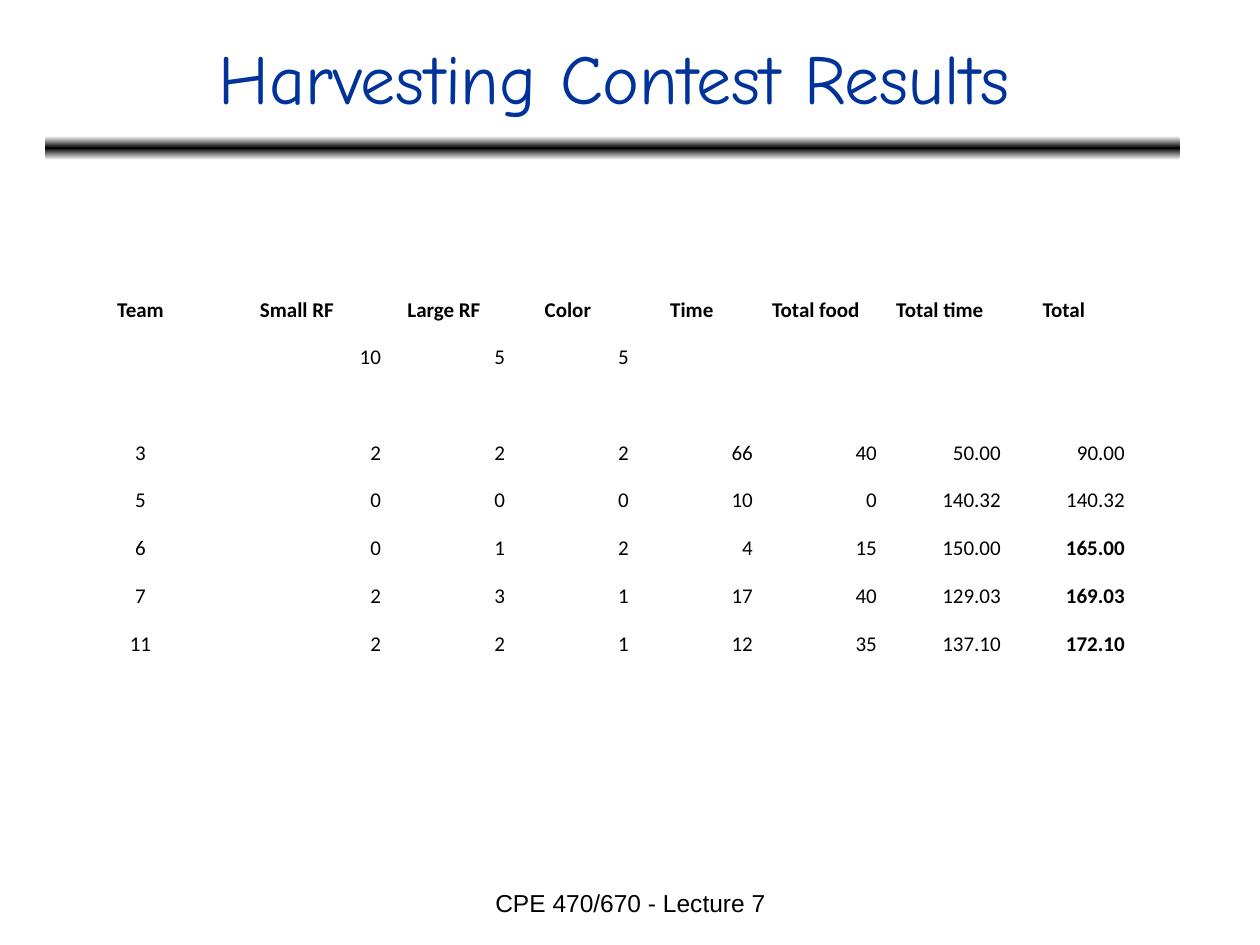
import copy

import pptx
import pptx.dml.color
import pptx.enum.shapes
import pptx.enum.text
import pptx.util

PX = 914400 / 126
COLORS = {"title": "003399", "text": "000000", "rule edge": "FFFFFF", "rule core": "000000"}
ALIGN = pptx.enum.text.PP_ALIGN
ANCHOR = pptx.enum.text.MSO_ANCHOR


def px(length):
    return pptx.util.Emu(round(length * PX))


def write(paragraph, text, color, align, **font_format):
    paragraph.alignment = align
    run = paragraph.add_run()
    run.text = text
    run.font.color.rgb = pptx.dml.color.RGBColor.from_string(COLORS[color])
    for attribute, value in font_format.items():
        setattr(run.font, attribute, value)


deck = pptx.Presentation()
deck.slide_width, deck.slide_height = px(1260), px(945)
slide = deck.slides.add_slide(deck.slide_layouts[5])

# Gradient rule under the title
rule = slide.shapes.add_shape(
    pptx.enum.shapes.MSO_SHAPE.ROUNDED_RECTANGLE, px(45), px(136), px(1135), px(24))
rule.shadow.inherit = False
rule.line.fill.background()
rule.fill.gradient()
rule.fill.gradient_angle = 90
stop_list = rule.fill._fill._gradFill.gsLst
stop_list.append(copy.deepcopy(stop_list[-1]))
for stop, position, color in zip(rule.fill.gradient_stops, (0, 0.5, 1),
                                 ("rule edge", "rule core", "rule edge")):
    stop.position = position
    stop.color.rgb = pptx.dml.color.RGBColor.from_string(COLORS[color])

# Title
title = slide.shapes.title
title.left, title.top, title.width, title.height = px(47), px(14), px(1134), px(125)
title.text_frame.vertical_anchor = ANCHOR.MIDDLE
write(title.text_frame.paragraphs[0], "Harvesting Contest Results", "title", ALIGN.CENTER,
      name="Comic Neue", size=pptx.util.Pt(40))

# Footer
footer = slide.shapes.add_textbox(px(431), px(882), px(399), px(44))
footer.text_frame.word_wrap = True
write(footer.text_frame.paragraphs[0], "CPE 470/670 - Lecture 7", "text", ALIGN.CENTER,
      name="Arial", size=pptx.util.Pt(14))

# Results table
results = [
    ["Team", "Small RF", "Large RF", "Color", "Time", "Total food", "Total time", "Total"],
    ["", "10", "5", "5", "", "", "", ""],
    [""] * 8,
    ["3", "2", "2", "2", "66", "40", "50.00", "90.00"],
    ["5", "0", "0", "0", "10", "0", "140.32", "140.32"],
    ["6", "0", "1", "2", "4", "15", "150.00", "165.00"],
    ["7", "2", "3", "1", "17", "40", "129.03", "169.03"],
    ["11", "2", "2", "1", "12", "35", "137.10", "172.10"],
]
top_totals = {"165.00", "169.03", "172.10"}
column_widths = [143, 170] + [124] * 6
cell_format = {"vertical_anchor": ANCHOR.BOTTOM, "margin_left": px(1), "margin_right": px(1),
               "margin_top": px(1), "margin_bottom": 0}

table = slide.shapes.add_table(len(results), len(column_widths), px(69), px(275),
                               px(sum(column_widths)), px(382)).table
table.first_row = table.horz_banding = False
for column, width in zip(table.columns, column_widths):
    column.width = px(width)

for row_index, row in enumerate(results):
    for column_index, text in enumerate(row):
        cell = table.cell(row_index, column_index)
        cell.fill.background()
        for attribute, value in cell_format.items():
            setattr(cell, attribute, value)
        if text:
            centered = row_index == 0 or column_index == 0
            write(cell.text_frame.paragraphs[0], text, "text",
                  ALIGN.CENTER if centered else ALIGN.RIGHT,
                  name="Calibri", size=pptx.util.Pt(12),
                  bold=row_index == 0 or text in top_totals)

deck.save("out.pptx")
